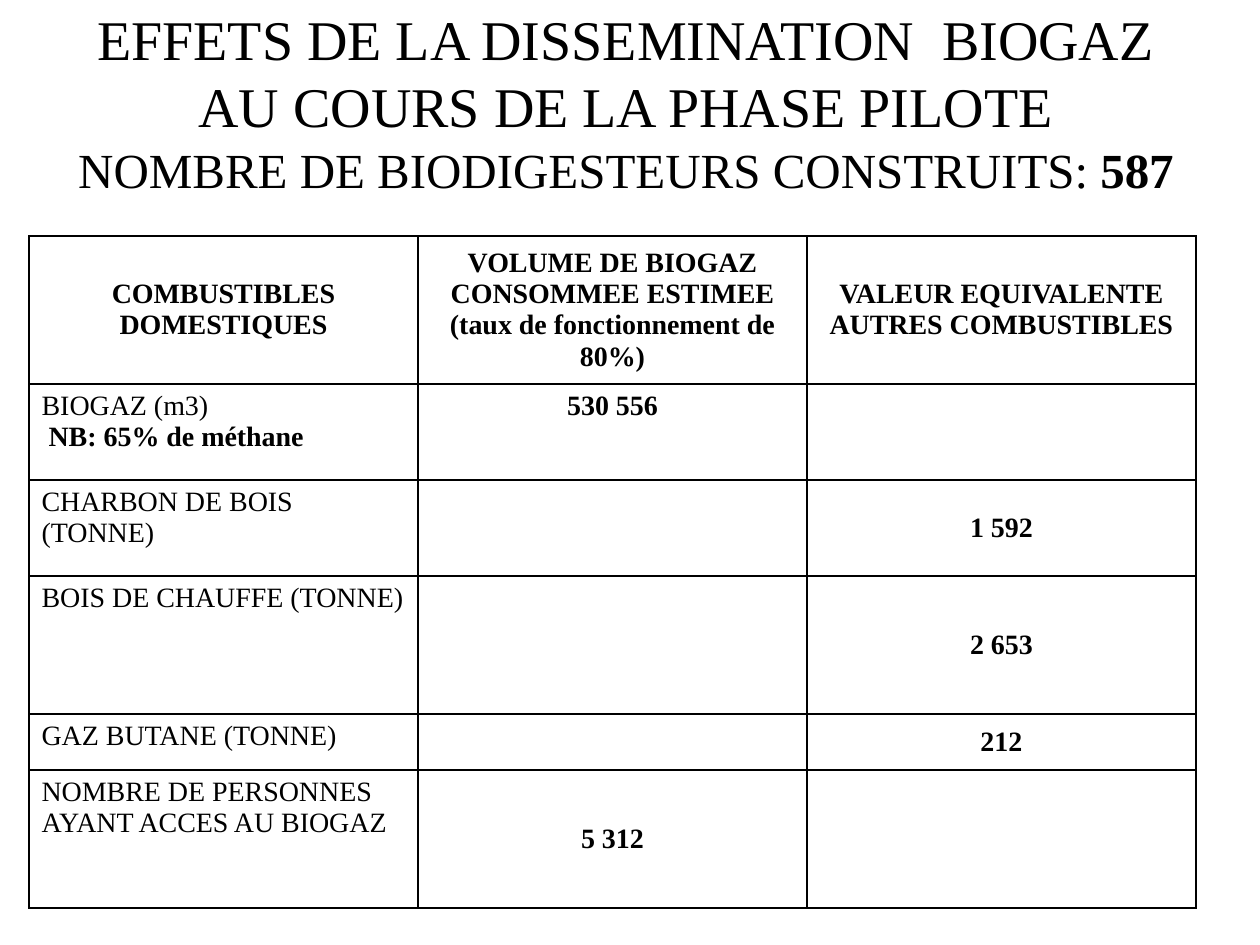
from lxml.etree import SubElement
from pptx import Presentation
from pptx.dml.color import RGBColor
from pptx.enum.text import MSO_ANCHOR, MSO_AUTO_SIZE, PP_ALIGN
from pptx.oxml.ns import qn
from pptx.util import Pt

PX = 914400 // 126
COLORS = {"text": "000000", "border": "000000"}
FONT = "Times New Roman"
COLUMNS = [389, 389, 389]
ROWS = [148, 96, 96, 138, 56, 138]
HEADERS = [
    "COMBUSTIBLES DOMESTIQUES",
    "VOLUME DE BIOGAZ CONSOMMEE ESTIMEE (taux de fonctionnement de 80%)",
    "VALEUR EQUIVALENTE AUTRES COMBUSTIBLES",
]
FUELS = [
    (["BIOGAZ (m3)", " NB: 65% de méthane"], "530 556", ""),
    (["CHARBON DE BOIS (TONNE)"], "", "1 592"),
    (["BOIS DE CHAUFFE (TONNE)"], "", "2 653"),
    (["GAZ BUTANE (TONNE)"], "", "212"),
    (["NOMBRE DE PERSONNES AYANT ACCES AU BIOGAZ"], "5 312", ""),
]


def add_run(p, text, size, bold=False):
    r = p.add_run()
    r.text = text
    for name, value in {"name": FONT, "size": Pt(size), "bold": bold}.items():
        setattr(r.font, name, value)
    r.font.color.rgb = RGBColor.from_string(COLORS["text"])


def set_borders(cell):
    tcPr = cell._tc.get_or_add_tcPr()
    for i, side in enumerate(("lnL", "lnR", "lnT", "lnB")):
        ln = SubElement(tcPr, qn(f"a:{side}"), w=str(Pt(1)))
        fill = SubElement(ln, qn("a:solidFill"))
        SubElement(fill, qn("a:srgbClr"), val=COLORS["border"])
        tcPr.insert(i, ln)


def fill_cell(cell, lines, align, anchor, bolds):
    cell.fill.background()
    set_borders(cell)
    cell.vertical_anchor = anchor
    tf = cell.text_frame
    for i, (line, bold) in enumerate(zip(lines, bolds)):
        p = tf.add_paragraph() if i else tf.paragraphs[0]
        p.alignment = align
        if line:
            add_run(p, line, 16, bold)


def add_title(s, x, y, w, h):
    sp = s.shapes.title
    box = {"left": x, "top": y, "width": w, "height": h}
    for name, value in box.items():
        setattr(sp, name, value * PX)
    tf = sp.text_frame
    frame = {
        "word_wrap": True,
        "auto_size": MSO_AUTO_SIZE.NONE,
        "vertical_anchor": MSO_ANCHOR.BOTTOM,
        "margin_bottom": 30 * PX,
    }
    for name, value in frame.items():
        setattr(tf, name, value)
    p = tf.paragraphs[0]
    p.alignment = PP_ALIGN.CENTER
    add_run(p, "EFFETS DE LA DISSEMINATION  BIOGAZ AU COURS DE LA PHASE PILOTE", 32)
    p.add_line_break()
    add_run(p, "NOMBRE DE BIODIGESTEURS CONSTRUITS: ", 28)
    add_run(p, "587", 28, True)


def add_fuel_table(s, x, y):
    box = [v * PX for v in (x, y, sum(COLUMNS), sum(ROWS))]
    table = s.shapes.add_table(len(ROWS), len(COLUMNS), *box).table
    table.first_row = table.horz_banding = False
    for column, width in zip(table.columns, COLUMNS):
        column.width = width * PX
    for row, height in zip(table.rows, ROWS):
        row.height = height * PX
    for c, header in enumerate(HEADERS):
        fill_cell(table.cell(0, c), [header], PP_ALIGN.CENTER, MSO_ANCHOR.MIDDLE, [True])
    for r, (label, *values) in enumerate(FUELS, 1):
        fill_cell(table.cell(r, 0), label, PP_ALIGN.LEFT, MSO_ANCHOR.TOP, [False, True])
        anchor = MSO_ANCHOR.TOP if r == 1 else MSO_ANCHOR.MIDDLE
        for c, value in enumerate(values, 1):
            fill_cell(table.cell(r, c), [value], PP_ALIGN.CENTER, anchor, [True])


def main():
    prs = Presentation()
    prs.slide_width, prs.slide_height = 1260 * PX, 945 * PX
    s = prs.slides.add_slide(prs.slide_layouts[5])
    add_title(s, 59, 108, 1134, 120)
    add_fuel_table(s, 29, 236)
    prs.save("out.pptx")


if __name__ == "__main__":
    main()
